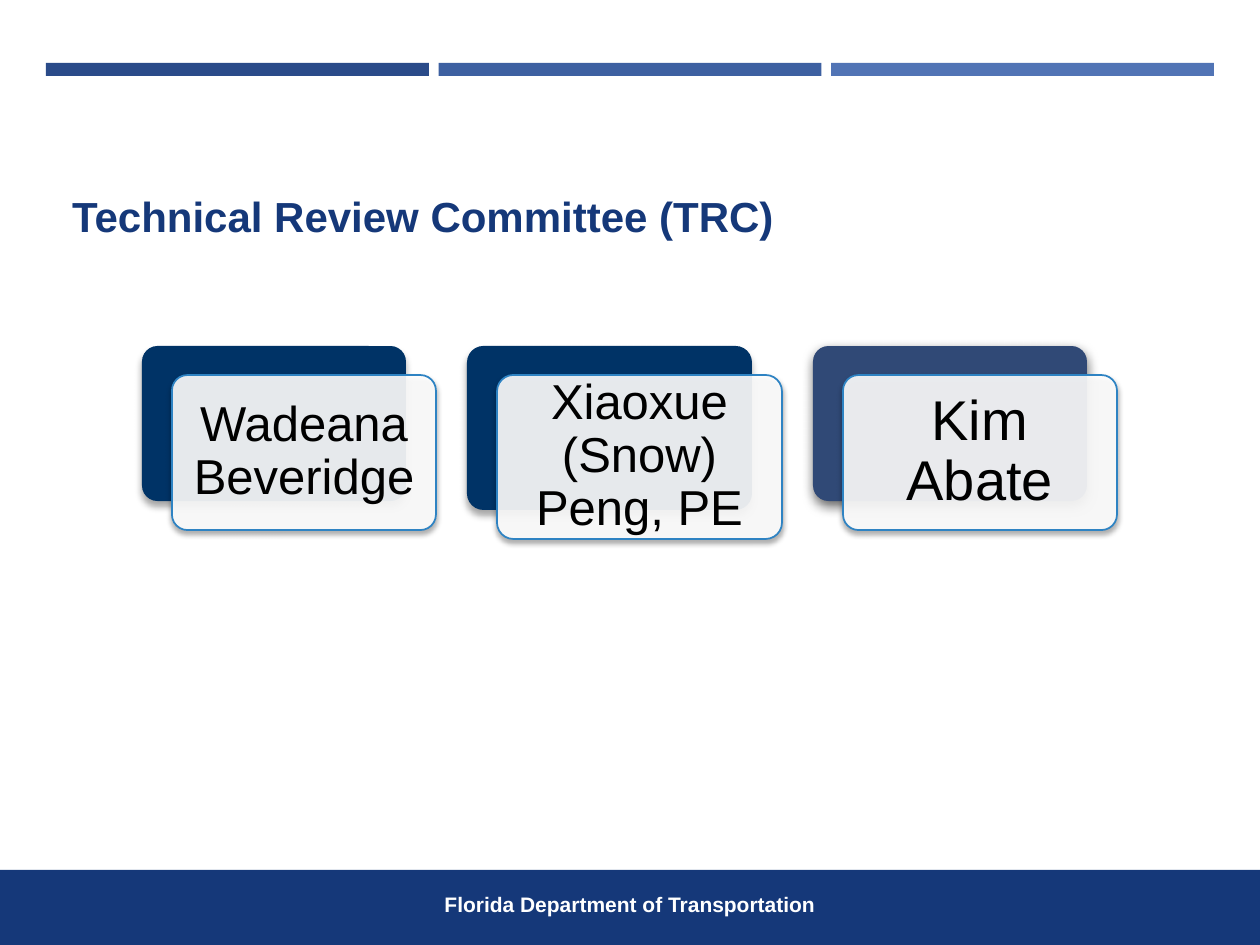
from lxml.etree import SubElement as Sub
from pptx import Presentation
from pptx.dml.color import RGBColor
from pptx.enum.shapes import MSO_SHAPE as Kind
from pptx.enum.text import MSO_ANCHOR as Anchor, PP_ALIGN as Align
from pptx.oxml.ns import qn
from pptx.util import Emu, Pt

WIDE, HIGH = 1260, 945
NAVY = "153879"
BARS = [("1F4283", 95), ("3D60A1", 100), ("5174B5", 100)]
BAR_LEFT, BAR_TOP, BAR_WIDE, BAR_HIGH = 46, 63, 383, 13

# shadow: opacity %, blur pt, distance pt, angle
DARK = (35, 4, 3, 90)
SOFT = (60, 7, 3, 84)
FRONT = (35, 3, 2, 90)
# name, width, height, back colour, back shadow, text size, inset
CARDS = [
    ("Wadeana Beveridge", 264, 155, "003366", DARK, 28, 15),
    ("Xiaoxue (Snow) Peng, PE", 285, 164, "003366", DARK, 28, 15),
    ("Kim Abate", 274, 155, "304976", SOFT, 32, 16),
]
CARD_LEFT, CARD_TOP, CARD_GAP = 142, 346, 61
SHIFT_X, SHIFT_Y, PAD = 30, 29, 4


def px(n):
    return Emu(round(n * 914400 / 126))


def rgb(code):
    return RGBColor.from_string(code)


def cast(shape, alpha, blur, dist, angle):
    """Give the shape a black outer shadow."""
    effects = shape._element.spPr.find(qn("a:effectLst"))
    shadow = Sub(effects, qn("a:outerShdw"), blurRad=str(Pt(blur)),
                 dist=str(Pt(dist)), dir=str(angle * 60000),
                 algn="ctr", rotWithShape="0")
    tint = Sub(shadow, qn("a:srgbClr"), val="000000")
    Sub(tint, qn("a:alpha"), val=str(alpha * 1000))


def block(slide, box, color, alpha=100, kind=Kind.RECTANGLE, edge=None):
    shape = slide.shapes.add_shape(kind, *map(px, box))
    shape.shadow.inherit = False
    shape.fill.solid()
    shape.fill.fore_color.rgb = rgb(color)
    if alpha < 100:
        tint = shape._element.spPr.find(".//" + qn("a:srgbClr"))
        Sub(tint, qn("a:alpha"), val=str(alpha * 1000))
    if edge:
        shape.line.color.rgb = rgb(edge)
        shape.line.width = Pt(1)
    else:
        shape.line.fill.background()
    return shape


def panel(slide, box, color, shadow, alpha=100, edge=None):
    shape = block(slide, box, color, alpha, Kind.ROUNDED_RECTANGLE, edge)
    shape.adjustments[0] = 0.1
    cast(shape, *shadow)


def label(slide, box, text, size, color, bold=False, align=Align.CENTER,
          anchor=Anchor.TOP, inset=(12, 6), space=None):
    frame = slide.shapes.add_textbox(*map(px, box)).text_frame
    frame.word_wrap = True
    frame.vertical_anchor = anchor
    frame.margin_left = frame.margin_right = px(inset[0])
    frame.margin_top = frame.margin_bottom = px(inset[1])
    para = frame.paragraphs[0]
    para.text = text
    para.alignment = align
    para.line_spacing = space
    font = para.font
    font.name, font.size, font.bold = "Arial", Pt(size), bold
    font.color.rgb = rgb(color)


def main():
    deck = Presentation()
    deck.slide_width, deck.slide_height = px(WIDE), px(HIGH)
    slide = deck.slides.add_slide(deck.slide_layouts[6])

    step = (WIDE - 2 * BAR_LEFT - BAR_WIDE) / (len(BARS) - 1)
    for i, (color, alpha) in enumerate(BARS):
        box = (BAR_LEFT + i * step, BAR_TOP, BAR_WIDE, BAR_HIGH)
        block(slide, box, color, alpha)

    block(slide, (0, 870, WIDE, 75), NAVY)
    label(slide, (252, 886, 756, 38), "Florida Department of Transportation",
          12, "FFFFFF", bold=True)
    label(slide, (60, 179, 1140, 84), "Technical Review Committee (TRC)",
          24, NAVY, bold=True, align=Align.LEFT, inset=(12, 11))

    left = CARD_LEFT
    for name, wide, high, color, shadow, size, inset in CARDS:
        x, y = left + SHIFT_X, CARD_TOP + SHIFT_Y
        panel(slide, (left, CARD_TOP, wide, high), color, shadow)
        panel(slide, (x, y, wide, high), "FFFFFF", FRONT, 90, "2E83C3")
        label(slide, (x + PAD, y + PAD, wide - 2 * PAD, high - 2 * PAD),
              name, size, "000000", anchor=Anchor.MIDDLE,
              inset=(inset, inset), space=0.9)
        left += wide + CARD_GAP

    deck.save("out.pptx")


if __name__ == "__main__":
    main()
